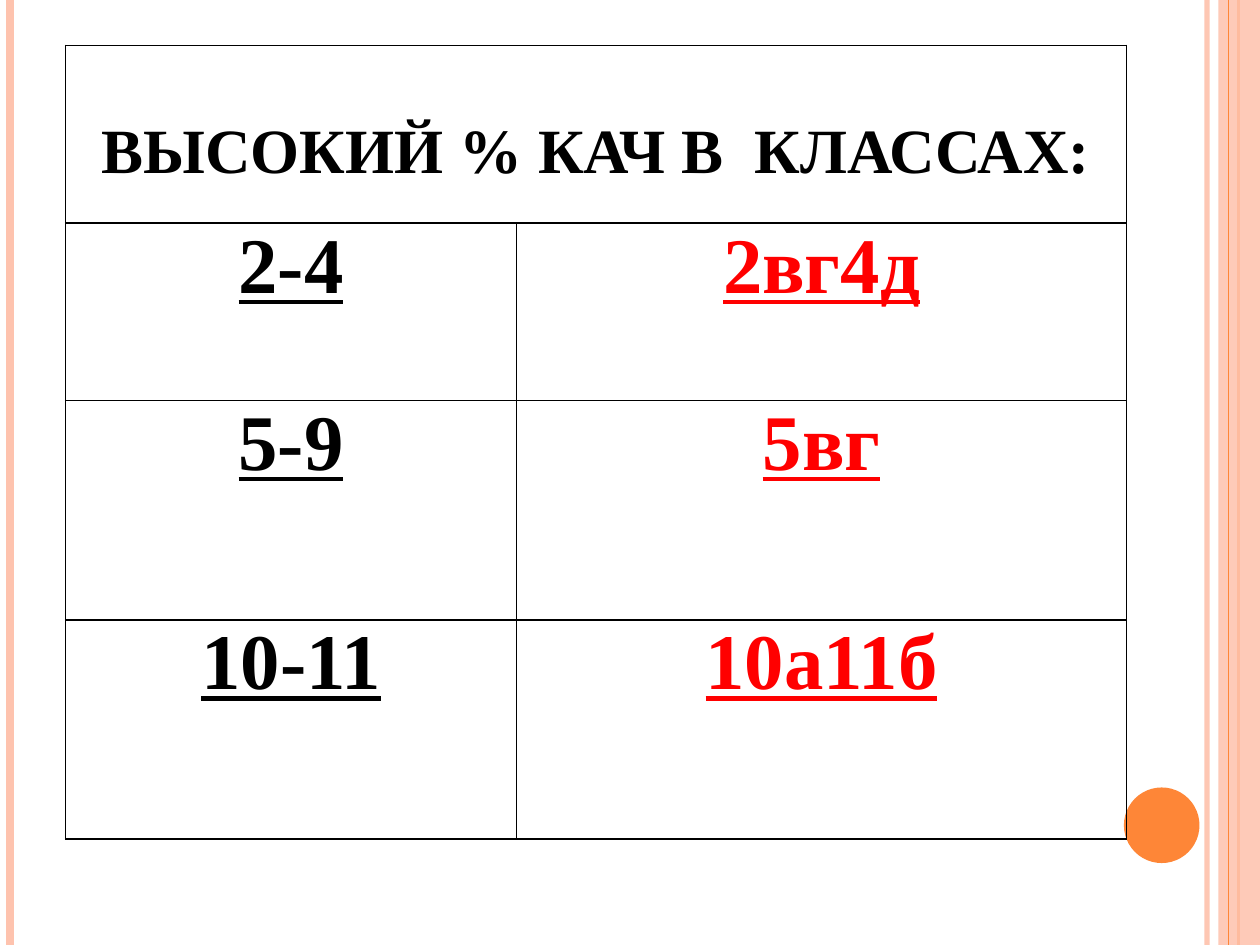
from dataclasses import dataclass

from lxml.etree import SubElement
from pptx import Presentation
from pptx.dml.color import RGBColor
from pptx.enum.shapes import MSO_CONNECTOR as Connector, MSO_SHAPE as Shape
from pptx.enum.text import PP_ALIGN as Align
from pptx.oxml.ns import qn
from pptx.util import Inches, Pt

COLORS = {"peach": "FEC3AE", "orange": "FE8637", "black": "000000", "red": "FF0000"}
FONT = "Times New Roman"
PAGE_WIDTH, PAGE_HEIGHT = 10, 7.5


@dataclass
class Stripe:
    x: float
    color: str
    width: float
    opacity: int = 100


@dataclass
class Accent:
    kind: Shape
    left: float
    top: float
    width: float
    height: float
    color: str
    opacity: int = 100


BACK_STRIPES = [Stripe(9.58, "peach", 3, 93), Stripe(0.08, "peach", 4.5),
                Stripe(9.83, "orange", 1.5)]
BAND = Accent(Shape.RECTANGLE, 9.67, 0, 0.33, PAGE_HEIGHT, "peach", 87)
FRONT_STRIPE = Stripe(9.75, "orange", 0.75)
CIRCLE = Accent(Shape.OVAL, 8.92, 6.25, 0.6, 0.6, "orange")

HEADING = "ВЫСОКИЙ % КАЧ В  КЛАССАХ:"
CLASSES = [("2-4", "2вг4д"), ("5-9", "5вг"), ("10-11", "10а11б")]
COLUMN_WIDTHS = [3.58, 4.84]
ROW_HEIGHTS = [1.41, 1.41, 1.74, 1.74]


def rgb(name: str) -> RGBColor:
    return RGBColor.from_string(COLORS[name])


def paint(fill, parent, color: str, opacity: int) -> None:
    """Fill solidly; parent is the XML element that holds the fill."""
    fill.solid()
    fill.fore_color.rgb = rgb(color)
    if opacity < 100:
        tint = parent.find(qn("a:solidFill")).find(qn("a:srgbClr"))
        SubElement(tint, qn("a:alpha"), val=str(opacity * 1000))


def draw_stripe(page, stripe: Stripe) -> None:
    x = Inches(stripe.x)
    line = page.shapes.add_connector(Connector.STRAIGHT, x, 0, x, Inches(PAGE_HEIGHT))
    line.line.width = Pt(stripe.width)
    properties = line._element.spPr
    paint(line.line.fill, properties.find(qn("a:ln")), stripe.color, stripe.opacity)
    SubElement(properties, qn("a:effectLst"))


def draw_accent(page, accent: Accent) -> None:
    shape = page.shapes.add_shape(accent.kind, Inches(accent.left), Inches(accent.top),
                                  Inches(accent.width), Inches(accent.height))
    shape.shadow.inherit = False
    paint(shape.fill, shape._element.spPr, accent.color, accent.opacity)
    shape.line.fill.background()


def frame_cell(cell) -> None:
    """Give the cell thin black borders, no fill and narrow margins."""
    properties = cell._tc.get_or_add_tcPr()
    for side in ("lnL", "lnR", "lnT", "lnB"):
        border = SubElement(properties, qn(f"a:{side}"), w=str(Pt(1)))
        solid = SubElement(border, qn("a:solidFill"))
        SubElement(solid, qn("a:srgbClr"), val=COLORS["black"])
    cell.fill.background()
    cell.margin_left = cell.margin_right = Inches(0.03)
    cell.margin_top = cell.margin_bottom = 0


def write_cell(cell, text: str, size: int, color: str, underline: bool) -> None:
    para = cell.text_frame.paragraphs[0]
    para.text = text
    para.alignment = Align.CENTER
    font = para.runs[0].font
    font.name, font.size, font.bold = FONT, Pt(size), True
    font.underline = underline
    font.color.rgb = rgb(color)


def draw_table(page) -> None:
    frame = page.shapes.add_table(len(ROW_HEIGHTS), len(COLUMN_WIDTHS),
                                  Inches(0.52), Inches(0.36),
                                  Inches(sum(COLUMN_WIDTHS)), Inches(sum(ROW_HEIGHTS)))
    table = frame.table
    table.first_row = table.horz_banding = False
    for column, width in zip(table.columns, COLUMN_WIDTHS):
        column.width = Inches(width)
    for row, height in zip(table.rows, ROW_HEIGHTS):
        row.height = Inches(height)
        for cell in row.cells:
            frame_cell(cell)

    heading = table.cell(0, 0)
    heading.merge(table.cell(0, 1))
    heading.margin_top = Inches(0.57)
    write_cell(heading, HEADING, 36, "black", False)
    for index, (grades, best) in enumerate(CLASSES, start=1):
        write_cell(table.cell(index, 0), grades, 45, "black", True)
        write_cell(table.cell(index, 1), best, 45, "red", True)


def main() -> None:
    deck = Presentation()
    deck.slide_width, deck.slide_height = Inches(PAGE_WIDTH), Inches(PAGE_HEIGHT)
    page = deck.slides.add_slide(deck.slide_layouts[6])
    for stripe in BACK_STRIPES:
        draw_stripe(page, stripe)
    draw_accent(page, BAND)
    draw_stripe(page, FRONT_STRIPE)
    draw_accent(page, CIRCLE)
    draw_table(page)
    deck.save("out.pptx")


if __name__ == "__main__":
    main()
